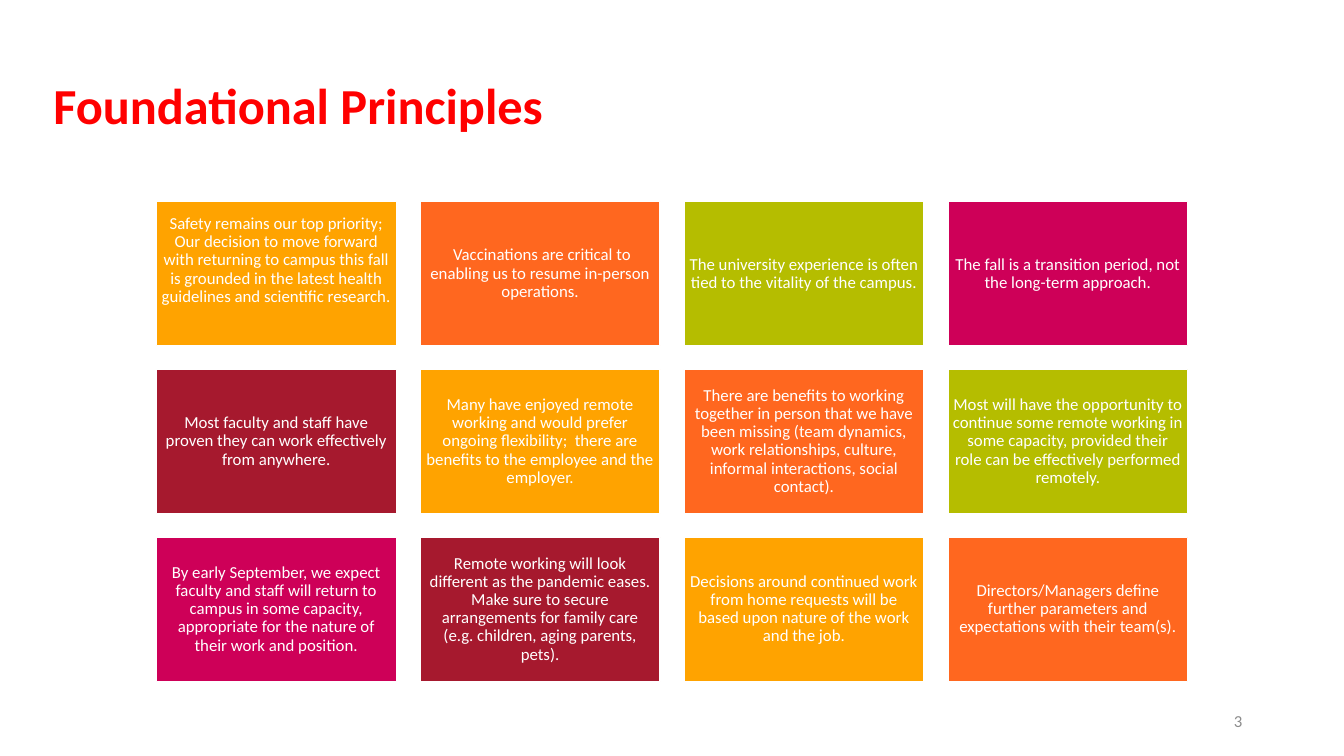
from pptx import Presentation
from pptx.dml.color import RGBColor
from pptx.enum.shapes import MSO_SHAPE
from pptx.enum.text import MSO_ANCHOR, PP_ALIGN
from pptx.util import Inches, Pt

RECTANGLE = MSO_SHAPE.RECTANGLE
MIDDLE = MSO_ANCHOR.MIDDLE
LEFT, CENTER, RIGHT = PP_ALIGN.LEFT, PP_ALIGN.CENTER, PP_ALIGN.RIGHT

FONT = "Calibri"
WHITE, RED, GRAY = "FFFFFF", "FF0000", "8C8C8C"
CARD_COLORS = ["FFA300", "FF671F", "B5BD00", "CE0058", "A6192E"]

# Card grid, in inches
COLUMNS = 4
GRID_LEFT, GRID_TOP = 1.55, 2.0
CARD_WIDTH, CARD_HEIGHT = 2.38, 1.43
COLUMN_STEP, ROW_STEP = 2.617, 1.665
CARD_INSET = 0.05
RAISED_INSET = 0.31  # lifts the text of the first card

PRINCIPLES = [
    "Safety remains our top priority; Our decision to move forward with returning "
    "to campus this fall is grounded in the latest health guidelines and scientific research.",
    " Vaccinations are critical to enabling us to resume in-person operations.",
    "The university experience is often tied to the vitality of the campus.",
    "The fall is a transition period, not the long-term approach.",
    "Most faculty and staff have proven they can work effectively from anywhere.",
    "Many have enjoyed remote working and would prefer ongoing flexibility;  there are "
    "benefits to the employee and the employer.",
    "There are benefits to working together in person that we have been missing (team "
    "dynamics, work relationships, culture, informal interactions, social contact).",
    "Most will have the opportunity to continue some remote working in some capacity, "
    "provided their role can be effectively performed remotely.",
    "By early September, we expect faculty and staff will return to campus in some "
    "capacity, appropriate for the nature of their work and position.",
    "Remote working will look different as the pandemic eases. Make sure to secure "
    "arrangements for family care (e.g. children, aging parents, pets).",
    "Decisions around continued work from home requests will be based upon nature of "
    "the work and the job.",
    "Directors/Managers define further parameters and expectations with their team(s).",
]


def rgb(hex_color):
    return RGBColor.from_string(hex_color)


def write(frame, text, size, color, align, bold=False, line_spacing=0.9):
    frame.word_wrap = True
    frame.vertical_anchor = MIDDLE
    paragraph = frame.paragraphs[0]
    paragraph.alignment = align
    paragraph.line_spacing = line_spacing
    run = paragraph.add_run()
    run.text = text
    run.font.name = FONT
    run.font.size = Pt(size)
    run.font.bold = bold
    run.font.color.rgb = rgb(color)


def add_label(slide, box, text, size, color, align, **style):
    label = slide.shapes.add_textbox(*map(Inches, box))
    write(label.text_frame, text, size, color, align, **style)


def add_card(slide, left, top, color, text, bottom_inset):
    card = slide.shapes.add_shape(
        RECTANGLE, Inches(left), Inches(top), Inches(CARD_WIDTH), Inches(CARD_HEIGHT))
    card.shadow.inherit = False
    card.fill.solid()
    card.fill.fore_color.rgb = rgb(color)
    card.line.color.rgb = rgb(WHITE)
    card.line.width = Pt(1)
    frame = card.text_frame
    frame.margin_left = frame.margin_right = frame.margin_top = Inches(CARD_INSET)
    frame.margin_bottom = Inches(bottom_inset)
    write(frame, text, 12, WHITE, CENTER)


def main():
    deck = Presentation()
    deck.slide_width, deck.slide_height = Inches(13.33), Inches(7.5)
    slide = deck.slides.add_slide(deck.slide_layouts[6])

    # Title and page number
    add_label(slide, (0.43, 0.35, 12.48, 1.45), "Foundational Principles",
              36, RED, LEFT, bold=True)
    add_label(slide, (9.42, 6.95, 3, 0.4), "3", 12, GRAY, RIGHT, line_spacing=1.0)

    # Principles, with the colours cycling along the rows
    for index, principle in enumerate(PRINCIPLES):
        row, column = divmod(index, COLUMNS)
        add_card(slide,
                 GRID_LEFT + column * COLUMN_STEP,
                 GRID_TOP + row * ROW_STEP,
                 CARD_COLORS[index % len(CARD_COLORS)],
                 principle,
                 RAISED_INSET if index == 0 else CARD_INSET)

    deck.save("out.pptx")


if __name__ == "__main__":
    main()
